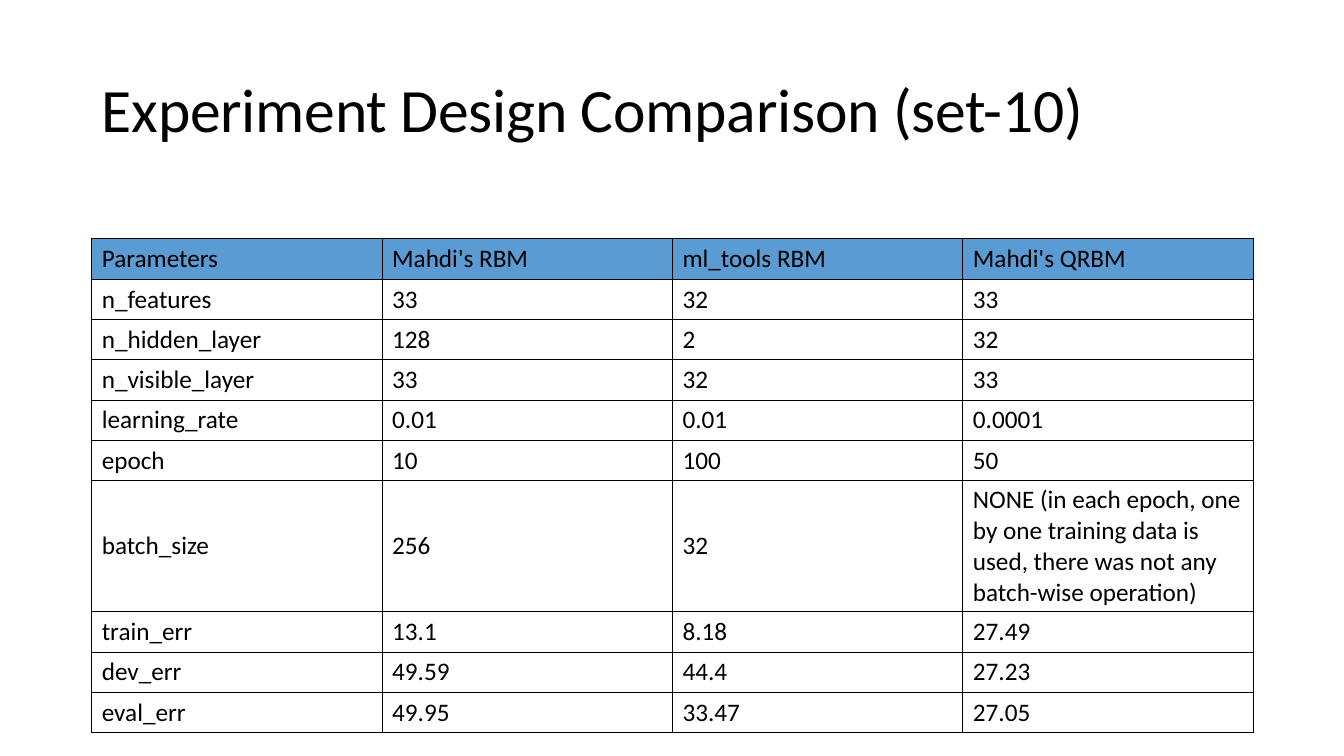
from lxml import etree
from pptx import Presentation
from pptx import util as u
from pptx.dml.color import RGBColor
from pptx.enum import text
from pptx.oxml import ns

PX = 9144  # EMU per px, 100 px to the inch


def px(length):
    return u.Emu(length * PX)


def color(hex_code):
    return RGBColor.from_string(hex_code)


deck = Presentation()
deck.slide_width, deck.slide_height = px(1333), px(750)
slide = deck.slides.add_slide(deck.slide_layouts[5])

# Title
title = slide.shapes.title
for side, length in dict(left=100, top=68, width=977, height=76).items():
    setattr(title, side, px(length))
frame = title.text_frame
title_format = dict(margin_left=px(1), margin_top=px(2), margin_right=0, margin_bottom=0,
                    vertical_anchor=text.MSO_ANCHOR.TOP, word_wrap=True,
                    auto_size=text.MSO_AUTO_SIZE.NONE)
for name, value in title_format.items():
    setattr(frame, name, value)
heading = frame.paragraphs[0]
heading.alignment = text.PP_ALIGN.LEFT
heading_run = heading.add_run()
heading_run.text = "Experiment Design Comparison (set-10)"
heading_run.font.name, heading_run.font.size = "Calibri", u.Pt(44)
heading_run.font.color.rgb = color("000000")
heading_run.font._element.set("spc", "-20")

# Comparison of the three models
experiments = [
    ("Parameters", "Mahdi's RBM", "ml_tools RBM", "Mahdi's QRBM"),
    ("n_features", "33", "32", "33"),
    ("n_hidden_layer", "128", "2", "32"),
    ("n_visible_layer", "33", "32", "33"),
    ("learning_rate", "0.01", "0.01", "0.0001"),
    ("epoch", "10", "100", "50"),
    ("batch_size", "256", "32",
     "NONE (in each epoch, one by one training data is used, "
     "there was not any batch-wise operation)"),
    ("train_err", "13.1", "8.18", "27.49"),
    ("dev_err", "49.59", "44.4", "27.23"),
    ("eval_err", "49.95", "33.47", "27.05"),
]
comparison = slide.shapes.add_table(len(experiments), 4, px(91), px(237),
                                    px(4 * 288), px(490)).table
comparison.first_row = comparison.horz_banding = False
for column in comparison.columns:
    column.width = px(288)

cell_format = dict(margin_left=px(10), margin_right=px(7), margin_top=0, margin_bottom=0,
                   vertical_anchor=text.MSO_ANCHOR.MIDDLE)
for row, values in enumerate(experiments):
    comparison.rows[row].height = px(130 if values[0] == "batch_size" else 40)
    for col, value in enumerate(values):
        cell = comparison.cell(row, col)
        cell.text = value
        for name, setting in cell_format.items():
            setattr(cell, name, setting)
        font = cell.text_frame.paragraphs[0].runs[0].font
        font.name, font.size = "Calibri", u.Pt(18)
        font.color.rgb = color("000000")

        # Borders come before the fill in the cell properties
        properties = cell._tc.get_or_add_tcPr()
        for edge in ("a:lnL", "a:lnR", "a:lnT", "a:lnB"):
            line = etree.SubElement(properties, ns.qn(edge), w=str(u.Pt(1)))
            ink = etree.SubElement(line, ns.qn("a:solidFill"))
            etree.SubElement(ink, ns.qn("a:srgbClr"), val="000000")
        if row == 0:
            cell.fill.solid()
            cell.fill.fore_color.rgb = color("5B9BD4")
        else:
            cell.fill.background()

deck.save("out.pptx")
